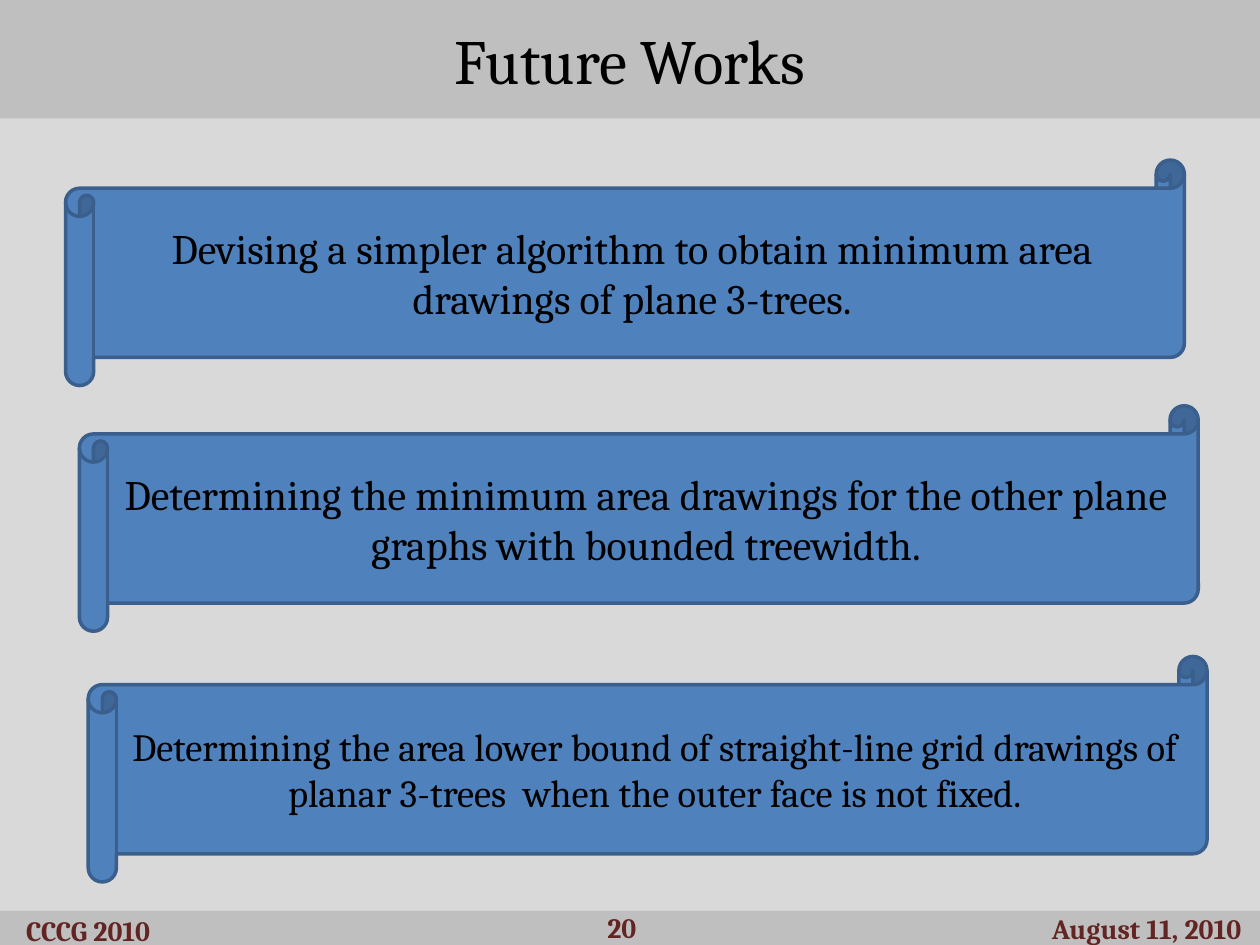
from pptx import Presentation
from pptx.dml.color import RGBColor
from pptx.enum.shapes import MSO_SHAPE
from pptx.enum.text import MSO_ANCHOR, PP_ALIGN
from pptx.util import Inches, Pt

RECTANGLE = MSO_SHAPE.RECTANGLE
SCROLL = MSO_SHAPE.HORIZONTAL_SCROLL
MIDDLE = MSO_ANCHOR.MIDDLE
CENTER = PP_ALIGN.CENTER


def color(value):
    return RGBColor.from_string(value)


def write(shape, text, size, font_color="000000", bold=False):
    frame = shape.text_frame
    frame.word_wrap = True
    frame.vertical_anchor = MIDDLE
    paragraph = frame.paragraphs[0]
    paragraph.alignment = CENTER
    run = paragraph.add_run()
    run.text = text
    run.font.name = "Cambria"
    run.font.size = Pt(size)
    run.font.bold = bold
    run.font.color.rgb = color(font_color)


presentation = Presentation()
presentation.slide_width = Inches(10)
presentation.slide_height = Inches(7.5)
slide = presentation.slides.add_slide(presentation.slide_layouts[6])
slide.background.fill.solid()
slide.background.fill.fore_color.rgb = color("D9D9D9")

bands = []
for top, height in [(0, 0.94), (7.23, 0.27)]:
    band = slide.shapes.add_shape(RECTANGLE, 0, Inches(top), Inches(10), Inches(height))
    band.shadow.inherit = False
    band.fill.solid()
    band.fill.fore_color.rgb = color("BFBFBF")
    band.line.fill.background()
    bands.append(band)
write(bands[0], "Future Works", size=36)

future_works = [
    (0.52, 1.27, 24, "Devising a simpler algorithm to obtain minimum area drawings of plane 3-trees."),
    (0.63, 3.22, 24, "Determining the minimum area drawings for the other plane graphs with bounded treewidth."),
    (0.7, 5.21, 22, "Determining the area lower bound of straight-line grid drawings of "
                    "planar 3-trees  when the outer face is not fixed."),
]
for left, top, size, text in future_works:
    scroll = slide.shapes.add_shape(SCROLL, Inches(left), Inches(top), Inches(8.88), Inches(1.79))
    scroll.shadow.inherit = False
    scroll.fill.solid()
    scroll.fill.fore_color.rgb = color("4F81BD")
    scroll.line.color.rgb = color("3A5F8C")
    scroll.line.width = Pt(2)
    write(scroll, text, size=size)

footers = [
    (-0.33, 7.21, 2.06, 0.35, "CCCG 2010"),
    (4.06, 7.22, 1.75, 0.28, "20"),
    (7.95, 7.19, 2.3, 0.35, "August 11, 2010"),
]
for left, top, width, height, text in footers:
    footer = slide.shapes.add_textbox(Inches(left), Inches(top), Inches(width), Inches(height))
    write(footer, text, size=16, font_color="632523", bold=True)

presentation.save("out.pptx")
